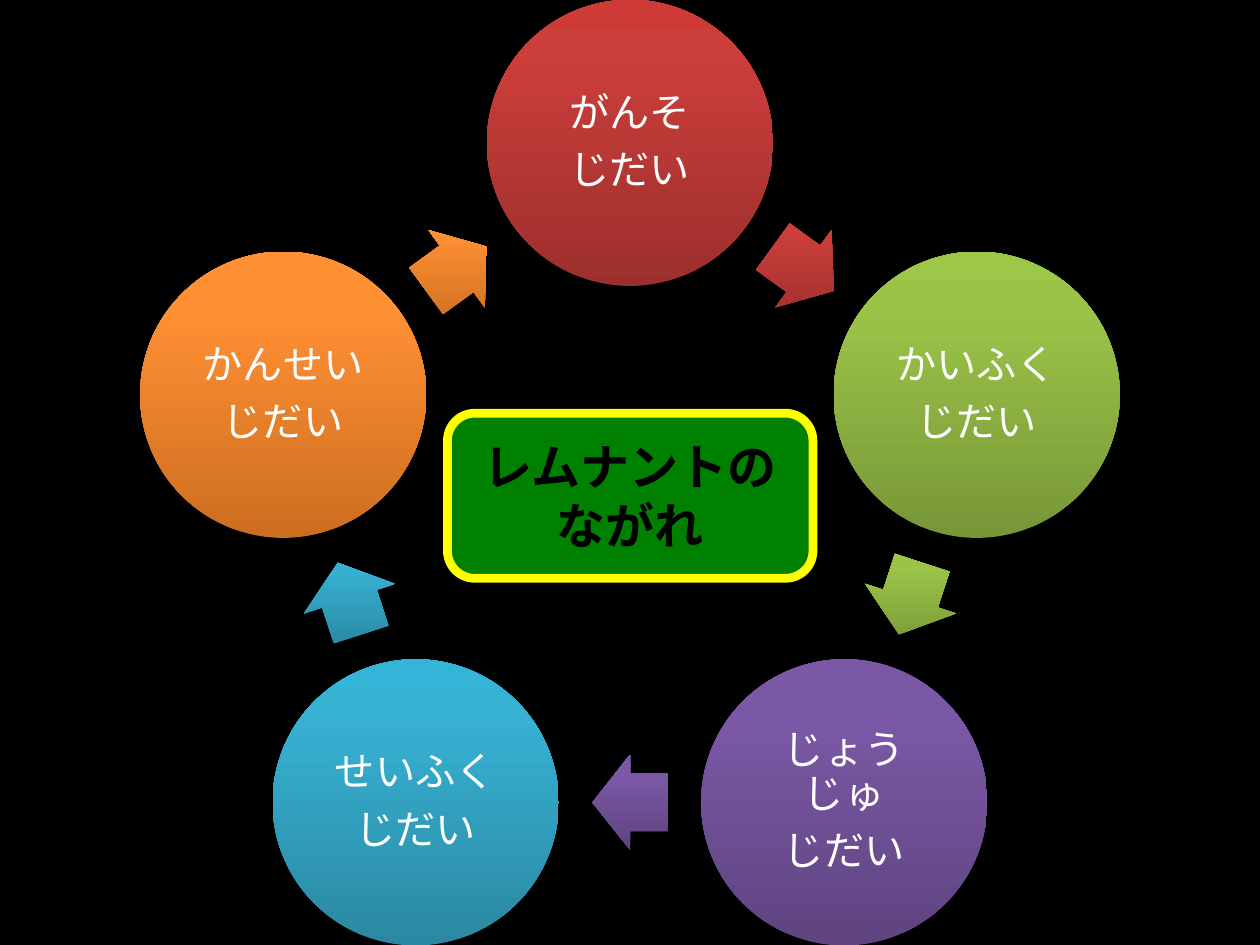
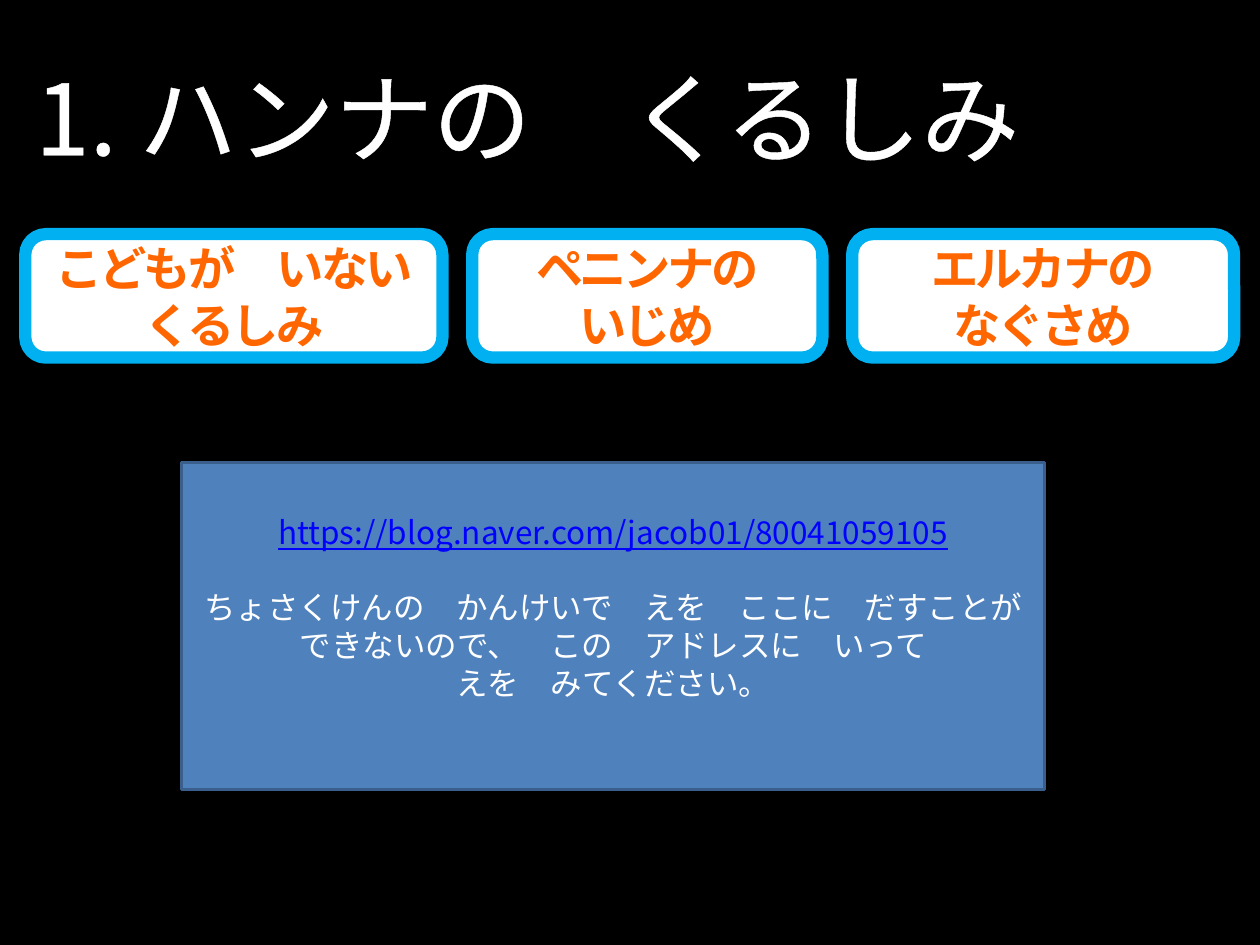
import math

from lxml import etree
from pptx import Presentation
from pptx.dml.color import RGBColor
from pptx.enum import shapes, text
from pptx.oxml import ns
from pptx.util import Cm, Pt

COLORS = {
    "black": "000000", "white": "FFFFFF", "green": "008000", "yellow": "FFFF00",
    "orange": "FF6600", "sky": "00B0F0", "blue": "4F81BD", "navy": "3A5F8C",
    "link": "0000FF",
}
JP_FONT = "Noto Sans CJK JP"
KR_FONT = "Noto Sans CJK KR"

# Each era: its lines, then its gradient from the bottom (0%) over 80% to the top.
ERAS = [
    (["がんそ", "じだい"], ("9C2F2D", "CB3E3A", "CE3B37")),
    (["かいふく", "じだい"], ("779737", "9BC348", "9DC746")),
    (["じょうじゅ", "じだい"], ("5F4480", "7B58A6", "7C57A8")),
    (["せいふく", "じだい"], ("2A88A2", "37B1D2", "34B4D6")),
    (["かんせい", "じだい"], ("CC6E20", "FF9034", "FF9136")),
]
RING_TITLE = ["レムナントの", "ながれ"]
RING_CENTER = (12.7, 10.23)
RING_RADIUS = 7.35
DISC = 5.77
ARROW = (1.52, 1.93)

PAIN_TITLE = "1. ハンナの　くるしみ"
# Lines, box width in cm, letter spacing in points
PAINS = [
    (["こどもが　いない", "くるしみ"], 8.41, -1.7),
    (["ペニンナの", "いじめ"], 7.06, -2),
    (["エルカナの", "なぐさめ"], 7.7, -1.7),
]
PAIN_LEFT, PAIN_GAP = 0.51, 0.6
ADDRESS = "https://blog.naver.com/jacob01/80041059105"
NOTICE = [
    "ちょさくけんの　かんけいで　えを　ここに　だすことが",
    "できないので、　この　アドレスに　いって",
    "えを　みてください。",
]
NOTICE_GAP = 21.4


def rgb(name):
    return RGBColor.from_string(COLORS[name])


def add_xml(parent, tag, **attributes):
    return etree.SubElement(parent, ns.qn(tag), attributes)


def write(shape, lines, size, color, font=JP_FONT, bold=False, align="CENTER",
          spacing=None, outline=None, line_spacing=None, after=None):
    """Fill a shape with one paragraph per line and return the paragraphs."""
    frame = shape.text_frame
    frame.word_wrap = True
    frame.vertical_anchor = text.MSO_ANCHOR.MIDDLE
    frame.text = "\n".join(lines)
    for para in frame.paragraphs:
        para.alignment = getattr(text.PP_ALIGN, align)
        if line_spacing:
            para.line_spacing = line_spacing
        if after:
            para.space_after = Pt(after)
        span = para.runs[0]
        span.font.size = Pt(size)
        span.font.bold = bold
        span.font.color.rgb = rgb(color)
        span.font.name = font
        props = span.font._element
        add_xml(props, "a:ea", typeface=font)
        if spacing:
            props.set("spc", str(round(spacing * 100)))
        if outline:
            line = add_xml(props, "a:ln", w=str(Pt(outline)))
            add_xml(add_xml(line, "a:solidFill"), "a:srgbClr", val=COLORS["white"])
            props.insert(0, line)
    return frame.paragraphs


def add_box(page, kind, left, top, width, height, fill=None, line=None, weight=0):
    box = page.shapes.add_shape(getattr(shapes.MSO_SHAPE, kind),
                                Cm(left), Cm(top), Cm(width), Cm(height))
    box.shadow.inherit = False
    if fill:
        box.fill.solid()
        box.fill.fore_color.rgb = rgb(fill)
    if line:
        box.line.color.rgb = rgb(line)
        box.line.width = Pt(weight)
    else:
        box.line.fill.background()
    return box


def add_centered(page, kind, center, width, height, gradient):
    box = add_box(page, kind, center[0] - width / 2, center[1] - height / 2, width, height)
    box.fill.gradient()
    grad = box._element.spPr.find(ns.qn("a:gradFill"))
    for child in list(grad):
        grad.remove(child)
    grad.set("rotWithShape", "0")
    stops = add_xml(grad, "a:gsLst")
    for percent, color in zip((0, 80, 100), gradient):
        stop = add_xml(stops, "a:gs", pos=str(percent * 1000))
        add_xml(stop, "a:srgbClr", val=color)
    add_xml(grad, "a:lin", ang="16200000", scaled="0")
    return box


def ring_point(step, radius):
    """Point on the ring, counted clockwise from the top in fifths of a turn."""
    angle = 2 * math.pi * step / len(ERAS)
    return (RING_CENTER[0] + radius * math.sin(angle),
            RING_CENTER[1] - radius * math.cos(angle))


def build_ring(deck):
    page = deck.slides.add_slide(deck.slide_layouts[6])
    label = add_box(page, "ROUNDED_RECTANGLE", 9.02, 8.33, 7.37, 3.33, "green", "yellow", 5)
    write(label, RING_TITLE, 28, "black", bold=True, outline=2.25)
    turn = 360 / len(ERAS)
    arrow_radius = RING_RADIUS * math.cos(math.pi / len(ERAS))
    for step, (lines, gradient) in enumerate(ERAS):
        disc = add_centered(page, "OVAL", ring_point(step, RING_RADIUS), DISC, DISC, gradient)
        frame = disc.text_frame
        frame.margin_left = frame.margin_right = Cm(0.08)
        frame.margin_top = frame.margin_bottom = Cm(0.08)
        write(disc, lines, 23, "white", line_spacing=0.9, after=8)
        arrow = add_centered(page, "RIGHT_ARROW", ring_point(step + 0.5, arrow_radius),
                             *ARROW, gradient)
        arrow.adjustments[0] = 0.6
        arrow.rotation = turn * (step + 0.5)


def build_pains(deck):
    page = deck.slides.add_slide(deck.slide_layouts[5])
    title = page.shapes.title
    title.left, title.top, title.width, title.height = Cm(0.3), Cm(0.74), Cm(25.1), Cm(3.2)
    title.text_frame.margin_left = Cm(0.41)
    write(title, [PAIN_TITLE], 56, "white", align="LEFT", outline=1.45)

    notice = add_box(page, "RECTANGLE", 3.66, 9.32, 17.4, 6.6, "blue", "navy", 2)
    address = write(notice, [ADDRESS, *NOTICE], 18, "white", font=KR_FONT)
    address[0].runs[0].font.color.rgb = rgb("link")
    address[0].runs[0].font.underline = True
    address[1].space_before = Pt(NOTICE_GAP)
    notice.text_frame.margin_bottom = Cm(0.13) + Pt(NOTICE_GAP)

    left = PAIN_LEFT
    for lines, width, spacing in PAINS:
        box = add_box(page, "ROUNDED_RECTANGLE", left, 4.72, width, 2.49, "white", "sky", 7)
        write(box, lines, 27, "orange", bold=True, spacing=spacing)
        left += width + PAIN_GAP


def main():
    deck = Presentation()
    deck.slide_width, deck.slide_height = Cm(25.4), Cm(19.05)
    backdrop = deck.slide_master.background.fill
    backdrop.solid()
    backdrop.fore_color.rgb = rgb("black")
    build_ring(deck)
    build_pains(deck)
    deck.save("out.pptx")


if __name__ == "__main__":
    main()
